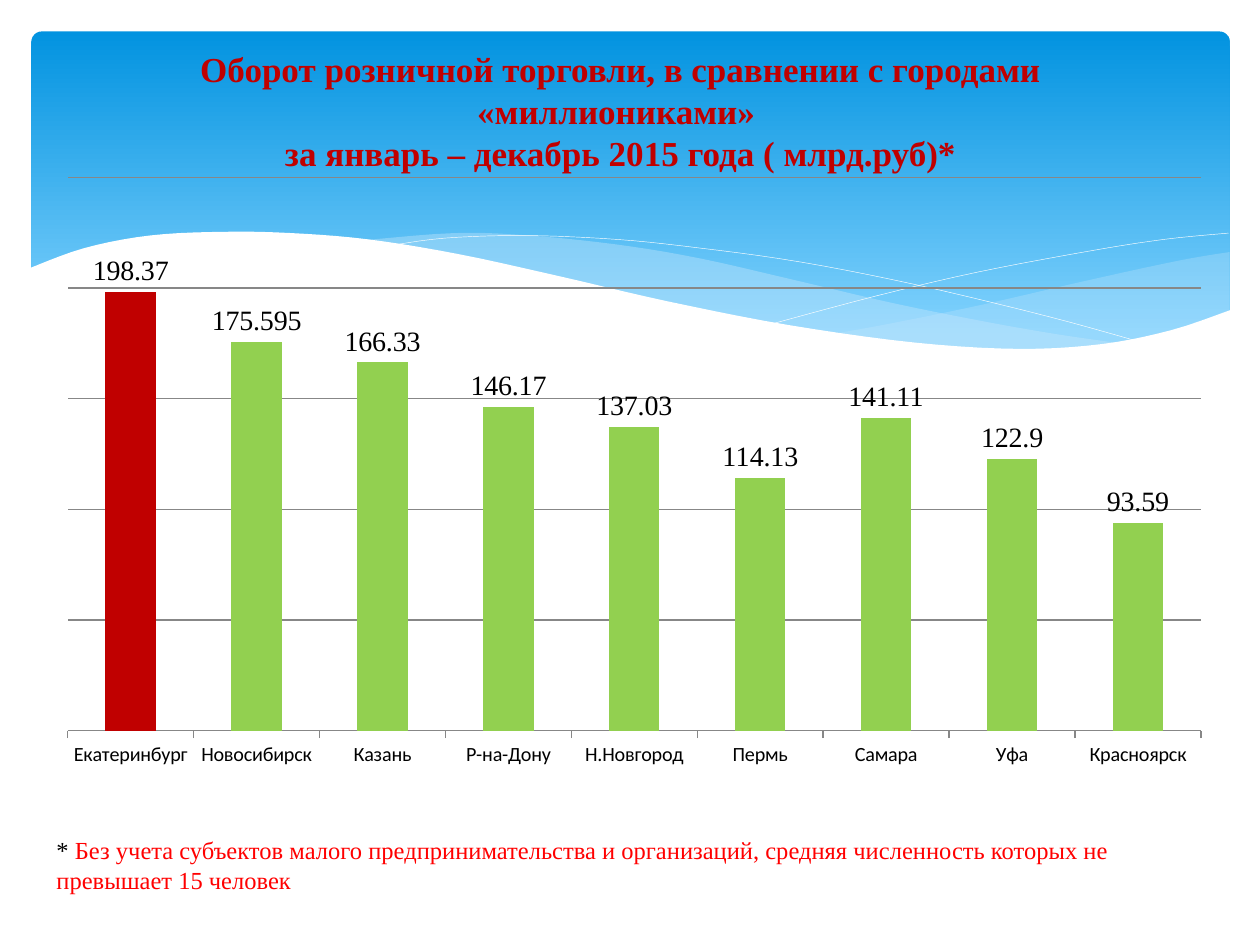
from lxml import etree
from pptx import Presentation
from pptx.chart.data import CategoryChartData
from pptx.dml.color import RGBColor
from pptx.enum.chart import XL_CHART_TYPE, XL_LABEL_POSITION, XL_TICK_MARK
from pptx.enum.shapes import MSO_SHAPE
from pptx.enum.text import MSO_ANCHOR, PP_ALIGN
from pptx.oxml import parse_xml
from pptx.oxml.ns import nsdecls, qn
from pptx.util import Pt

COLUMN = XL_CHART_TYPE.COLUMN_CLUSTERED
ABOVE = XL_LABEL_POSITION.OUTSIDE_END
OUT, NONE = XL_TICK_MARK.OUTSIDE, XL_TICK_MARK.NONE
ROUND = MSO_SHAPE.ROUNDED_RECTANGLE
TOP, MIDDLE = MSO_ANCHOR.TOP, MSO_ANCHOR.MIDDLE
LEFT, CENTER = PP_ALIGN.LEFT, PP_ALIGN.CENTER
SERIF, SANS = "Times New Roman", "Calibri"

SALES = {
    "Екатеринбург": 198.37, "Новосибирск": 175.595, "Казань": 166.33,
    "Р-на-Дону": 146.17, "Н.Новгород": 137.03, "Пермь": 114.13,
    "Самара": 141.11, "Уфа": 122.9, "Красноярск": 93.59,
}

RIGHT_TOP = [(702.7, 144), (673.2, 149), (619.9, 160.6), (560.9, 174.2),
             (508.3, 185), (475.9, 190.8)]
RIGHT_LOW = [(475.9, 190.8), (507.6, 195.1), (545, 198.7), (586.1, 200.2),
             (627.8, 197.3), (663.1, 190.8), (702.7, 177.8)]
MID_TOP = [(643, 196.6), (602.6, 190.8), (558, 182.9), (508.3, 172.8),
           (452.9, 159.8), (399.6, 147.6), (352.1, 139.7), (302.4, 134.6),
           (259.9, 133.2), (205.9, 137.5)]
MID_LOW = [(205.9, 137.5), (260.6, 146.2), (323.3, 159.8), (381.6, 172.8),
           (445, 185.8), (500.4, 194.4), (547.9, 199.4), (596.2, 200.2),
           (643, 196.6)]
FALL = [(222.5, 140.4), (254.2, 136.1), (299.5, 134.6), (352.1, 136.8),
        (400.3, 141.8), (457.9, 149.8), (523.4, 162.7), (598.3, 180.7),
        (653, 195.8)]
RISE = [(441.4, 185), (500.4, 169.2), (558.7, 155.5), (623.5, 143.3),
        (665.3, 136.8), (702, 133.2)]
FRONT = [(703.4, 177.1), (669.6, 188.6), (630, 196.6), (582.5, 199.4),
         (522.7, 195.8), (450.7, 185.8), (380.9, 172.1), (321.8, 158.4),
         (262.8, 145.4), (210.2, 136.8), (165.6, 133.2), (127.4, 132.5),
         (85.7, 134.6), (48.2, 141.8), (16.6, 153.4)]
BASE = [(16.6, 236.9), (703.4, 236.9)]


def color(code):
    return RGBColor.from_string(code)


def paint(fill, code):
    fill.solid()
    fill.fore_color.rgb = color(code)


def smooth(knots, steps=5):
    ends = [knots[0], *knots, knots[-1]]
    curve = [knots[0]]
    for a, b, c, d in zip(ends, ends[1:], ends[2:], ends[3:]):
        for step in range(1, steps + 1):
            t = step / steps
            curve.append(tuple(
                q + t * (r - p) / 2 + t * t * (2 * p - 5 * q + 4 * r - s) / 2
                + t ** 3 * (3 * q - p - 3 * r + s) / 2
                for p, q, r, s in zip(a, b, c, d)))
    return curve


def draw(slide, points, close):
    spots = [(Pt(x), Pt(y)) for x, y in points]
    pen = slide.shapes.build_freeform(*spots[0], scale=1.0)
    pen.add_line_segments(spots[1:], close=close)
    shape = pen.convert_to_shape()
    shape.shadow.inherit = False
    return shape


def add_wave(slide, points, code, alpha=100):
    wave = draw(slide, points, True)
    paint(wave.fill, code)
    wave.line.fill.background()
    if alpha < 100:
        tint = wave.fill._xPr.find(qn("a:solidFill"))[0]
        etree.SubElement(tint, qn("a:alpha"), val=str(alpha * 1000))


def add_curve(slide, knots):
    curve = draw(slide, smooth(knots), False)
    curve.fill.background()
    paint(curve.line.fill, "FFFFFF")
    curve.line.width = Pt(0.25)


def add_banner(slide, box):
    panel = slide.shapes.add_shape(ROUND, *map(Pt, box))
    panel.adjustments[0] = 0.03
    panel.shadow.inherit = False
    panel.line.fill.background()
    panel.fill.gradient()
    panel.fill.gradient_angle = 270
    stops = zip(panel.fill.gradient_stops, ((0, "0293E0"), (0.9, "83D3FE")))
    for stop, (place, code) in stops:
        stop.position = place
        stop.color.rgb = color(code)
    add_wave(slide, smooth(RIGHT_TOP) + smooth(RIGHT_LOW), "C6E7FC", 29)
    add_wave(slide, smooth(MID_TOP) + smooth(MID_LOW), "C6E7FC", 40)
    for knots in (FALL, RISE):
        add_curve(slide, knots)
    add_wave(slide, smooth(FRONT) + BASE, "FFFFFF")


def set_font(font, size, code, name=SERIF, bold=False):
    font.size = Pt(size)
    font.name = name
    font.bold = bold
    font.color.rgb = color(code)


def add_sales(slide, box):
    data = CategoryChartData()
    data.categories = list(SALES)
    data.add_series("Series 1", list(SALES.values()))
    chart = slide.shapes.add_chart(COLUMN, *map(Pt, box), data).chart
    set_font(chart.font, 18, "000000", SANS)
    chart.has_legend = False
    chart.has_title = False

    plot = chart.plots[0]
    plot.gap_width = 150
    plot.vary_by_categories = False
    bars = plot.series[0]
    paint(bars.format.fill, "92D050")
    paint(bars.points[0].format.fill, "C00000")
    tags = bars.data_labels
    tags.show_value = True
    tags.position = ABOVE
    set_font(tags.font, 16, "000000")

    names = chart.category_axis
    names.major_tick_mark = OUT
    set_font(names.tick_labels.font, 11.5, "000000", SANS)
    scale = chart.value_axis
    scale.visible = False
    scale.major_tick_mark = NONE
    scale.minimum_scale, scale.maximum_scale = 0, 250
    scale.major_unit = 50
    scale.has_major_gridlines = True
    for line in (names.format.line, scale.major_gridlines.format.line):
        paint(line.fill, "878787")
        line.width = Pt(0.75)

    area = chart._chartSpace.chart.plotArea
    for old in area.findall(qn("c:layout")):
        area.remove(old)
    parts = {"x": 0.02, "y": 0.02, "w": 0.96, "h": 0.9}
    rules = '<c:layoutTarget val="inner"/><c:xMode val="edge"/><c:yMode val="edge"/>'
    rules += "".join(f'<c:{key} val="{val}"/>' for key, val in parts.items())
    area.insert(0, parse_xml(
        f'<c:layout {nsdecls("c")}><c:manualLayout>{rules}</c:manualLayout></c:layout>'))


def add_text(slide, box, runs, size, align=LEFT, anchor=TOP, bold=False):
    frame = slide.shapes.add_textbox(*map(Pt, box)).text_frame
    frame.word_wrap = True
    frame.vertical_anchor = anchor
    para = frame.paragraphs[0]
    para.alignment = align
    for text, code in runs:
        if text == "\n":
            para.add_line_break()
            continue
        run = para.add_run()
        run.text = text
        set_font(run.font, size, code, bold=bold)


def main():
    deck = Presentation()
    deck.slide_width, deck.slide_height = Pt(720), Pt(540)
    slide = deck.slides.add_slide(deck.slide_layouts[6])
    add_banner(slide, (18, 18, 684.7, 194.4))
    add_sales(slide, (25.2, 94.3, 674.6, 351.4))
    add_text(slide, (30.2, 26.6, 648.8, 73.4), [
        ("Оборот розничной торговли, в сравнении с городами «миллиониками» ", "C00000"),
        ("\n", "C00000"),
        ("за январь – декабрь 2015 года ( млрд.руб)*", "C00000"),
    ], 20, CENTER, MIDDLE, True)
    add_text(slide, (25.2, 473.8, 652.3, 63.4), [
        ("* ", "000000"),
        ("Без учета субъектов малого предпринимательства и организаций, "
         "средняя численность которых не превышает 15 человек", "FF0000"),
    ], 14)
    deck.save("out.pptx")


if __name__ == "__main__":
    main()
